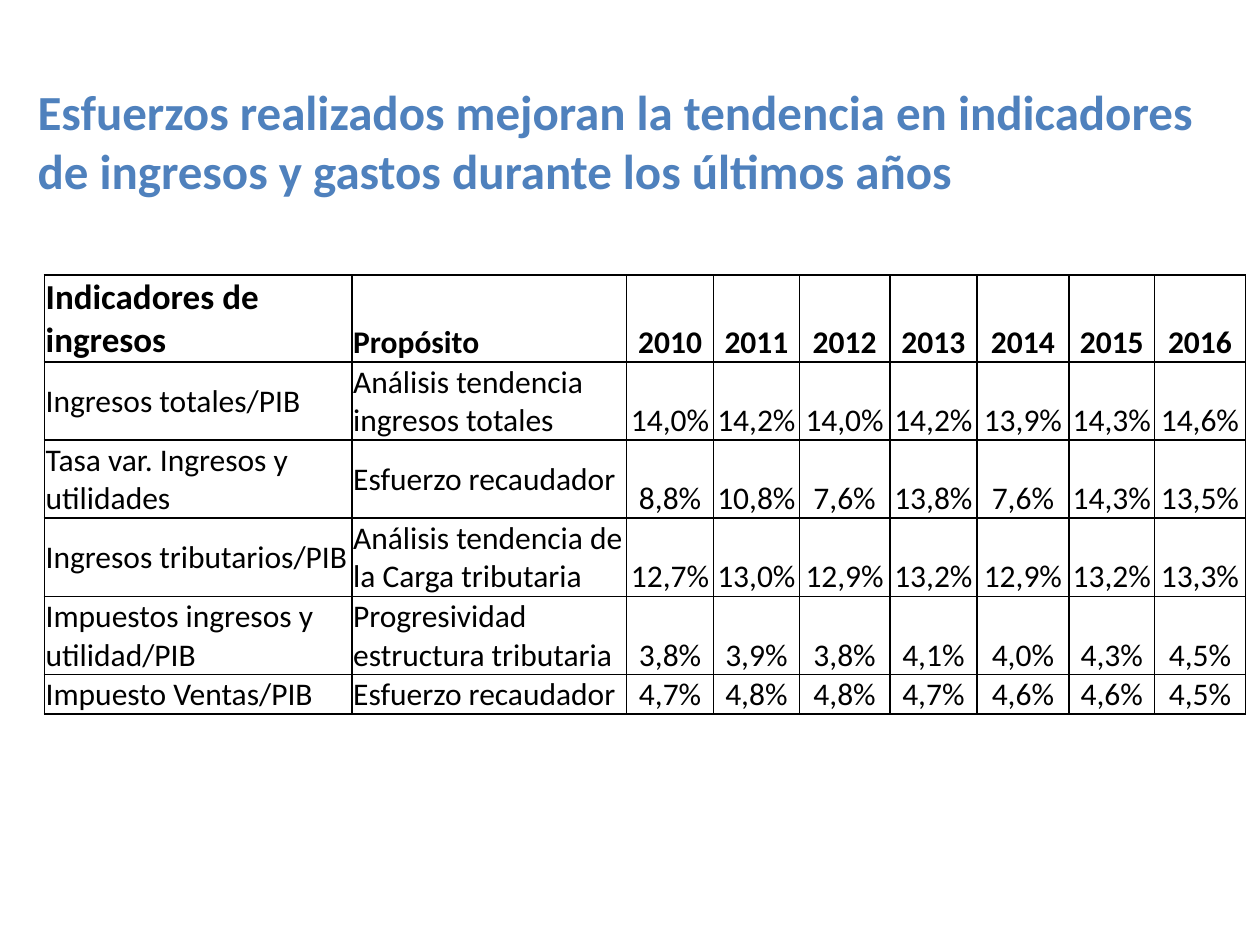
from lxml import etree
from pptx import Presentation
from pptx.dml.color import RGBColor
from pptx.enum.text import MSO_ANCHOR, PP_ALIGN
from pptx.oxml.ns import qn
from pptx.util import Pt

LEFT, CENTER = PP_ALIGN.LEFT, PP_ALIGN.CENTER
MIDDLE, BOTTOM = MSO_ANCHOR.MIDDLE, MSO_ANCHOR.BOTTOM

FONT = "Calibri"
COLORS = {"title": "4F81BD", "text": "000000", "border": "000000"}

TITLE = ("Esfuerzos realizados mejoran la tendencia en indicadores "
         "de ingresos y gastos durante los últimos años")
HEADER = ["Indicadores de ingresos", "Propósito", *map(str, range(2010, 2017))]
INDICATORS = [
    ["Ingresos totales/PIB", "Análisis tendencia ingresos totales",
     "14,0%", "14,2%", "14,0%", "14,2%", "13,9%", "14,3%", "14,6%"],
    ["Tasa var. Ingresos y utilidades", "Esfuerzo recaudador",
     "8,8%", "10,8%", "7,6%", "13,8%", "7,6%", "14,3%", "13,5%"],
    ["Ingresos tributarios/PIB", "Análisis tendencia de la Carga tributaria",
     "12,7%", "13,0%", "12,9%", "13,2%", "12,9%", "13,2%", "13,3%"],
    ["Impuestos ingresos y utilidad/PIB", "Progresividad estructura tributaria",
     "3,8%", "3,9%", "3,8%", "4,1%", "4,0%", "4,3%", "4,5%"],
    ["Impuesto Ventas/PIB", "Esfuerzo recaudador",
     "4,7%", "4,8%", "4,8%", "4,7%", "4,6%", "4,6%", "4,5%"],
]
COLUMN_WIDTHS = [175.7, 157, 49.7, 49, 51.8, 49.7, 52.6, 49, 51.8]
ROW_HEIGHTS = [49, 44, 44, 44, 44, 22]
SINGLE_LINE_PURPOSE_ROW = 2  # its purpose is centred beside a two-line indicator


def write_text(frame, text, size, color, bold=False, align=LEFT):
    para = frame.paragraphs[0]
    para.alignment = align
    span = para.add_run()
    span.text = text
    span.font.name = FONT
    span.font.size = Pt(size)
    span.font.bold = bold
    span.font.color.rgb = RGBColor.from_string(COLORS[color])


def add_title(page):
    box = page.shapes.add_textbox(Pt(14.4), Pt(43.2), Pt(705.6), Pt(75))
    box.text_frame.word_wrap = True
    write_text(box.text_frame, TITLE, 28, "title", bold=True)


def set_borders(cell):
    properties = cell._tc.get_or_add_tcPr()
    for position, side in enumerate(("lnL", "lnR", "lnT", "lnB")):
        line = etree.Element(qn(f"a:{side}"), w=str(Pt(1)))
        fill = etree.SubElement(line, qn("a:solidFill"))
        etree.SubElement(fill, qn("a:srgbClr"), val=COLORS["border"])
        properties.insert(position, line)


def fill_cell(cell, text, row, column):
    is_header = row == 0
    is_middle = not is_header and (
        column == 0 or (column == 1 and row == SINGLE_LINE_PURPOSE_ROW))
    cell.margin_left = cell.margin_right = cell.margin_top = Pt(0.72)
    cell.margin_bottom = Pt(0)
    cell.vertical_anchor = MIDDLE if is_middle else BOTTOM
    cell.fill.background()
    set_borders(cell)
    size = 20 if is_header and column == 0 else 18
    align = CENTER if column > 1 else LEFT
    write_text(cell.text_frame, text, size, "text", is_header, align)


def add_indicator_table(page):
    rows = [HEADER, *INDICATORS]
    table = page.shapes.add_table(
        len(rows), len(HEADER), Pt(25.4), Pt(157),
        Pt(sum(COLUMN_WIDTHS)), Pt(sum(ROW_HEIGHTS))).table
    table.first_row = table.horz_banding = False
    for column, width in zip(table.columns, COLUMN_WIDTHS):
        column.width = Pt(width)
    for row, height in zip(table.rows, ROW_HEIGHTS):
        row.height = Pt(height)
    for row, texts in enumerate(rows):
        for column, text in enumerate(texts):
            fill_cell(table.cell(row, column), text, row, column)


def main():
    deck = Presentation()
    deck.slide_width, deck.slide_height = Pt(720), Pt(540)
    page = deck.slides.add_slide(deck.slide_layouts[6])

    # Indicator table
    add_indicator_table(page)

    # Title
    add_title(page)

    deck.save("out.pptx")


if __name__ == "__main__":
    main()
